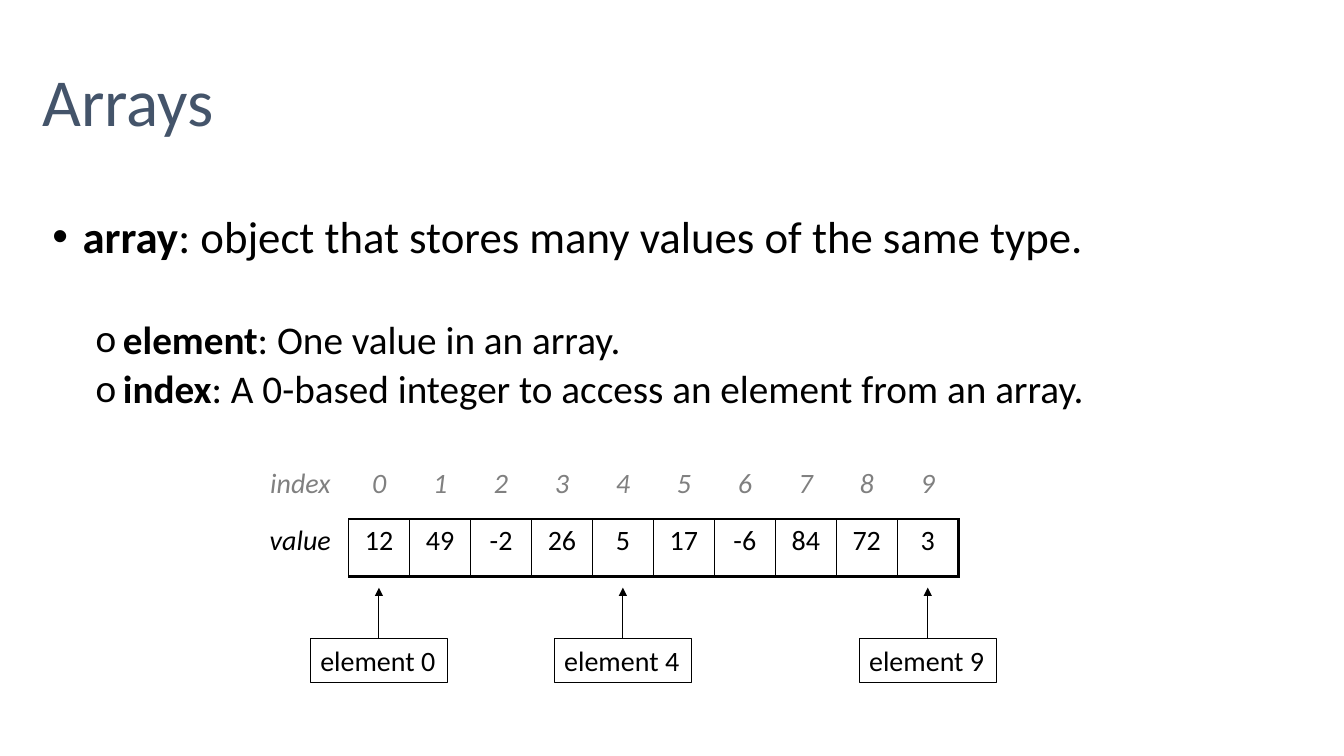
from lxml import etree
from pptx import Presentation, util as u
from pptx.dml.color import RGBColor
from pptx.enum import shapes, text
from pptx.oxml.ns import qn

PX = 4572
NO_GRID = "{2D5ABB26-0587-4C30-8999-92F81FD0307C}"


def px(*lengths):
    return [u.Emu(n * PX) for n in lengths]


def color(value):
    return RGBColor.from_string(value)


def assign(obj, values):
    for name, value in values.items():
        setattr(obj, name, value)


class Deck:
    font = "Calibri"
    ink = "000000"

    def __init__(self, width, height):
        self.prs = Presentation()
        self.prs.slide_width, self.prs.slide_height = px(width, height)
        self.s = self.prs.slides.add_slide(self.prs.slide_layouts[1])

    def place(self, sp, box, **frame):
        assign(sp, dict(zip(("left", "top", "width", "height"), px(*box))))
        tf = sp.text_frame
        assign(tf, {"auto_size": text.MSO_AUTO_SIZE.NONE, **frame})
        return tf

    def run(self, p, words, size, ink=None, **fmt):
        r = p.add_run()
        r.text = words
        assign(r.font, {"name": self.font, "size": u.Pt(size), **fmt})
        r.font.color.rgb = color(ink or self.ink)

    def title(self, words, box, size, ink):
        tf = self.place(self.s.shapes.title, box, vertical_anchor=text.MSO_ANCHOR.BOTTOM,
                        margin_left=0, margin_right=0)
        p = tf.paragraphs[0]
        assign(p, {"alignment": text.PP_ALIGN.LEFT, "line_spacing": 0.9})
        self.run(p, words, size, ink)

    def bullets(self, items, box, inset):
        tf = self.place(self.s.placeholders[1], box, margin_top=px(inset)[0],
                        vertical_anchor=text.MSO_ANCHOR.TOP)
        for i, (level, before, term, meaning) in enumerate(items):
            p = tf.add_paragraph() if i else tf.paragraphs[0]
            size, indent, hang, mark, face = self.levels[level]
            assign(p, {"level": level, "line_spacing": 0.9, "space_before": u.Pt(before)})
            pPr = p._p.get_or_add_pPr()
            pPr.set("marL", str(indent * PX))
            pPr.set("indent", str(-hang * PX))
            etree.SubElement(pPr, qn("a:buFont"), typeface=face)
            etree.SubElement(pPr, qn("a:buChar"), char=mark)
            self.run(p, term, size, bold=True)
            self.run(p, meaning, size, bold=False)

    levels = [(32, 60, 60, "•", "Arial"), (28, 140, 54, "o", "Calibri")]

    def border(self, cell, **widths):
        tcPr = cell._tc.get_or_add_tcPr()
        for i, (side, width) in enumerate(widths.items()):
            ln = etree.Element(qn("a:ln" + side), w=str(u.Pt(width)))
            fill = etree.SubElement(ln, qn("a:solidFill"))
            etree.SubElement(fill, qn("a:srgbClr"), val=self.ink)
            tcPr.insert(i, ln)

    def table(self, rows, at, widths, row_height, size, formats):
        gf = self.s.shapes.add_table(len(rows), len(widths),
                                     *px(*at, sum(widths), row_height * len(rows)))
        next(gf._element.iter(qn("a:tableStyleId"))).text = NO_GRID
        t = gf.table
        assign(t, {"first_row": False, "horz_banding": False})
        for col, width in zip(t.columns, px(*widths)):
            col.width = width
        for i, row in enumerate(rows):
            t.rows[i].height = px(row_height)[0]
            for j, words in enumerate(row):
                cell = t.cell(i, j)
                cell.fill.background()
                p = cell.text_frame.paragraphs[0]
                p.alignment = text.PP_ALIGN.CENTER
                self.run(p, str(words), size, **formats(i, j))
        return t

    def box(self, words, box, size):
        sp = self.s.shapes.add_shape(shapes.MSO_SHAPE.RECTANGLE, *px(*box))
        sp.shadow.inherit = False
        sp.fill.background()
        self.stroke(sp.line)
        tf = self.place(sp, box, word_wrap=False, auto_size=text.MSO_AUTO_SIZE.SHAPE_TO_FIT_TEXT)
        p = tf.paragraphs[0]
        p.alignment = text.PP_ALIGN.LEFT
        self.run(p, words, size)

    def stroke(self, line):
        line.color.rgb = color(self.ink)
        line.width = u.Pt(0.75)

    def arrow(self, *ends):
        c = self.s.shapes.add_connector(shapes.MSO_CONNECTOR.STRAIGHT, *px(*ends))
        self.stroke(c.line)
        etree.SubElement(c.line._get_or_add_ln(), qn("a:tailEnd"), type="triangle")
        etree.SubElement(c._element.spPr, qn("a:effectLst"))


def main():
    d = Deck(2667, 1500)
    d.title("Arrays", (84, 0, 2500, 290), 48, "44546A")
    d.bullets([
        (0, 0, "array", ": object that stores many values of the same type."),
        (1, 41, "element", ": One value in an array."),
        (1, 5, "index", ": A 0-based integer to access an element from an array."),
    ], (84, 290, 2500, 1132), 136)

    values = [12, 49, -2, 26, 5, 17, -6, 84, 72, 3]
    count, left, label, cell = len(values), 500, 192, 121

    def formats(i, j):
        return {"ink": d.ink if i else "808080", "italic": i == 0 or j == 0}

    t = d.table([["index", *range(count)], ["value", *values]], (left, 916),
                [label] + [cell] * count, 114, 20, formats)
    d.border(t.cell(1, 0), R=1)
    for j in range(1, count + 1):
        d.border(t.cell(1, j), L=1, R=2.25 if j == count else 1, T=1, B=2.25)

    for i in (0, 4, 9):
        x = left + label + cell * i + cell // 2
        d.arrow(x, 1266, x, 1166)
        d.box(f"element {i}", (x - 136, 1266, 272, 88), 20)
    d.prs.save("out.pptx")


if __name__ == "__main__":
    main()
